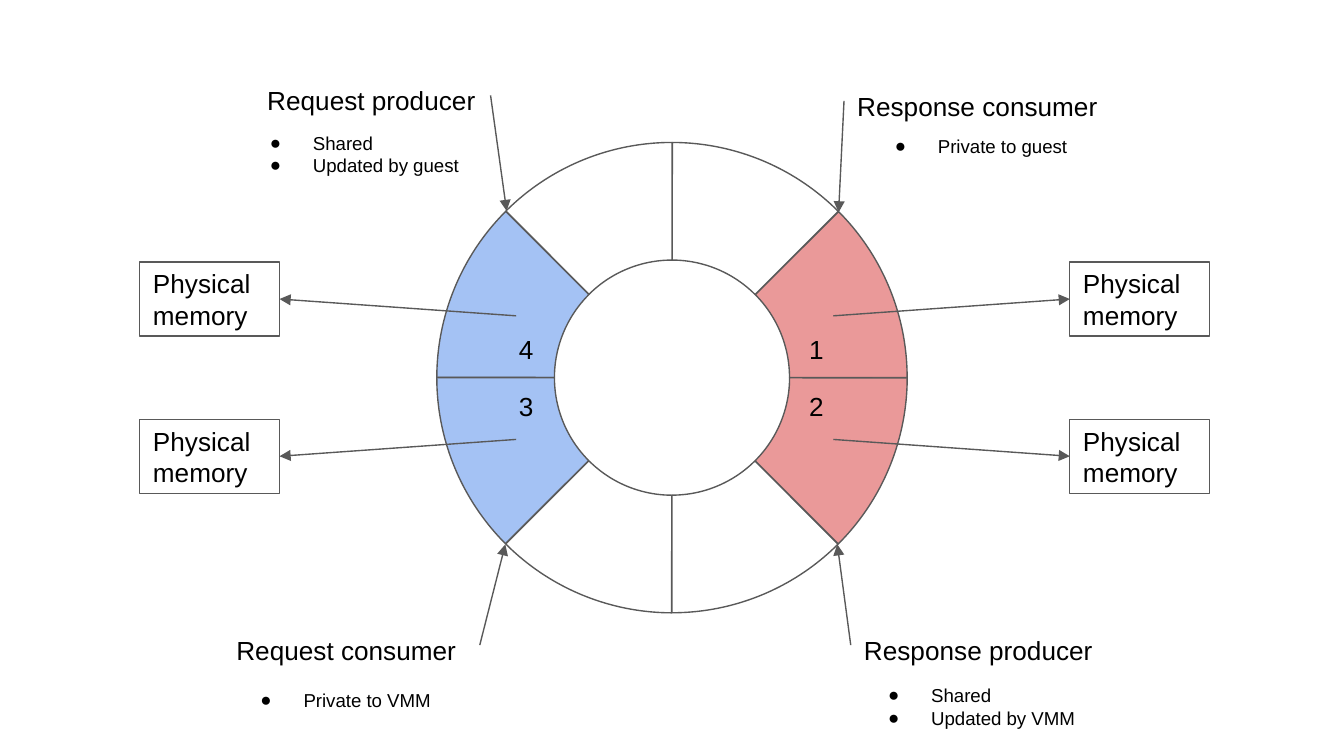
from dataclasses import dataclass

from lxml import etree
from pptx import Presentation
from pptx.dml.color import RGBColor
from pptx.enum import shapes, text
from pptx.oxml import ns
from pptx.util import Inches, Pt


@dataclass(frozen=True)
class Theme:
    white: str = "FFFFFF"
    ink: str = "000000"
    line: str = "595959"
    red: str = "EA9999"
    blue: str = "A4C2F4"
    font: str = "Arial"
    body: float = 14
    small: float = 10
    stroke: float = 0.75


@dataclass(frozen=True)
class Box:
    x: float
    y: float
    w: float
    h: float


@dataclass(frozen=True)
class Role:
    name: str
    label: Box
    notes: tuple[str, ...]
    list: Box
    start: tuple[float, float]
    end: tuple[float, float]


@dataclass(frozen=True)
class Slot:
    num: str
    digit: Box
    start: tuple[float, float]
    memory: Box
    side: int


THEME = Theme()
RING = Box(3.25, 1.06, 3.5, 3.5)
SECTORS = {
    0: THEME.red, 315: THEME.white, 270: THEME.white, 225: THEME.blue,
    180: THEME.blue, 135: THEME.white, 90: THEME.white, 45: THEME.red,
}
ROLES = (
    Role("Response consumer", Box(6.28, 0.57, 2.1, 0.37), ("Private to guest",),
         Box(6.38, 0.92, 1.91, 0.42), (6.28, 0.75), (6.24, 1.58)),
    Role("Response producer", Box(6.33, 4.62, 2.21, 0.37), ("Shared", "Updated by VMM"),
         Box(6.33, 4.99, 1.91, 0.52), (6.33, 4.8), (6.23, 4.05)),
    Role("Request consumer", Box(1.66, 4.62, 1.91, 0.37), ("Private to VMM",),
         Box(1.66, 5.04, 1.91, 0.52), (3.57, 4.8), (3.76, 4.05)),
    Role("Request producer", Box(1.89, 0.53, 1.76, 0.37), ("Shared", "Updated by guest"),
         Box(1.73, 0.88, 1.91, 0.52), (3.65, 0.71), (3.77, 1.57)),
)
SLOTS = tuple(
    Slot(num, Box(digit, top, 0.41, 0.42), (tail, level), Box(left, row, 1.04, 0.55), side)
    for nums, digit, tail, left, side in (("43", 3.71, 3.84, 1.04, 3), ("12", 5.87, 6.2, 7.96, 1))
    for num, top, level, row in zip(nums, (2.39, 2.81), (2.35, 3.27), (1.95, 3.12))
)


def place(box: Box) -> tuple:
    return Inches(box.x), Inches(box.y), Inches(box.w), Inches(box.h)


def color(code: str) -> RGBColor:
    return RGBColor.from_string(code)


def stroke(item) -> None:
    item.line.color.rgb = color(THEME.line)
    item.line.width = Pt(THEME.stroke)


def draw_shape(slide, kind, box: Box, fill: str):
    shape = slide.shapes.add_shape(kind, *place(box))
    shape.shadow.inherit = False
    shape.fill.solid()
    shape.fill.fore_color.rgb = color(fill)
    stroke(shape)
    return shape


def write(shape, words: str, size: float, align=text.PP_ALIGN.LEFT,
          anchor=text.MSO_ANCHOR.TOP) -> None:
    frame = shape.text_frame
    frame.text = words
    frame.word_wrap = True
    frame.vertical_anchor = anchor
    frame.margin_left = frame.margin_right = Inches(0.1)
    frame.margin_top = frame.margin_bottom = Inches(0.1)
    for para in frame.paragraphs:
        para.alignment = align
        for run in para.runs:
            run.font.name = THEME.font
            run.font.size = Pt(size)
            run.font.color.rgb = color(THEME.ink)


def draw_list(slide, box: Box, notes: tuple[str, ...]) -> None:
    shape = slide.shapes.add_textbox(*place(box))
    write(shape, "\n".join(notes), THEME.small)
    for para in shape.text_frame.paragraphs:
        props = para._p.get_or_add_pPr()
        props.set("marL", str(Inches(0.5)))
        props.set("indent", str(Inches(-0.32)))
        tint = etree.SubElement(props, ns.qn("a:buClr"))
        etree.SubElement(tint, ns.qn("a:srgbClr"), val=THEME.ink)
        etree.SubElement(props, ns.qn("a:buSzPts"), val=str(int(THEME.small * 100)))
        etree.SubElement(props, ns.qn("a:buFont"), typeface=THEME.font)
        etree.SubElement(props, ns.qn("a:buChar"), char="●")


def draw_arrow(slide, start: tuple[float, float], end: tuple[float, float]):
    arrow = slide.shapes.add_connector(
        shapes.MSO_CONNECTOR.STRAIGHT, *(Inches(v) for v in start + end))
    stroke(arrow)
    etree.SubElement(arrow.line._get_or_add_ln(), ns.qn("a:tailEnd"), type="triangle")
    etree.SubElement(arrow._element.spPr, ns.qn("a:effectLst"))
    return arrow


def draw_ring(slide) -> None:
    for angle, fill in SECTORS.items():
        arc = draw_shape(slide, shapes.MSO_SHAPE.BLOCK_ARC, RING, fill)
        for index, value in enumerate((189.07, 0, 0.25)):
            arc.adjustments[index] = value
        arc.rotation = angle


def draw_role(slide, role: Role) -> None:
    draw_arrow(slide, role.start, role.end)
    write(slide.shapes.add_textbox(*place(role.label)), role.name, THEME.body)
    draw_list(slide, role.list, role.notes)


def draw_slot(slide, slot: Slot) -> None:
    middle = text.MSO_ANCHOR.MIDDLE
    memory = draw_shape(slide, shapes.MSO_SHAPE.RECTANGLE, slot.memory, THEME.white)
    write(memory, "Physical memory", THEME.body, anchor=middle)
    arrow = draw_arrow(slide, slot.start, (slot.memory.x, slot.memory.y))
    arrow.end_connect(memory, slot.side)
    digit = slide.shapes.add_textbox(*place(slot.digit))
    write(digit, slot.num, THEME.body, text.PP_ALIGN.CENTER, middle)


def main() -> None:
    deck = Presentation()
    deck.slide_width = Inches(10)
    deck.slide_height = deck.slide_width * 9 // 16
    slide = deck.slides.add_slide(deck.slide_layouts[6])
    draw_ring(slide)
    for role in ROLES:
        draw_role(slide, role)
    for slot in SLOTS:
        draw_slot(slide, slot)
    deck.save("out.pptx")


if __name__ == "__main__":
    main()
